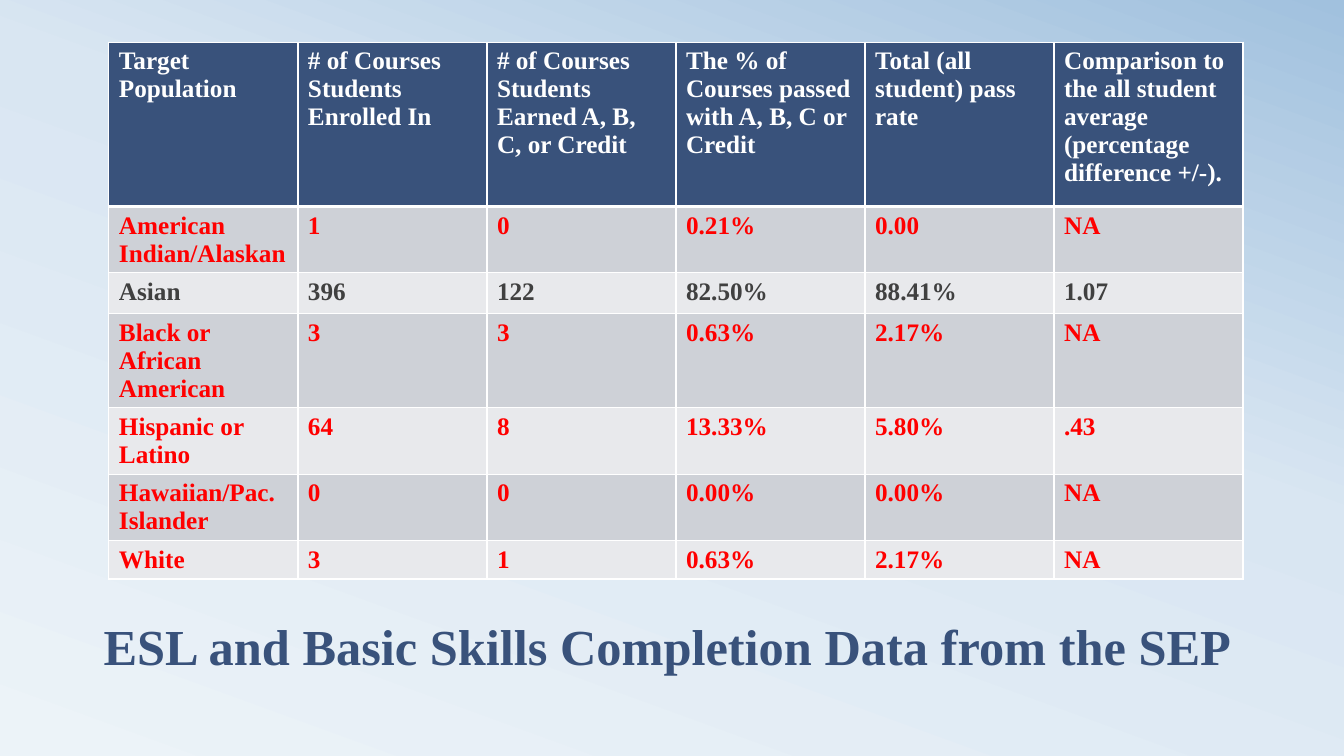
import copy

import pptx
import pptx.dml.color
import pptx.enum.text
import pptx.oxml
import pptx.oxml.ns
import pptx.util
from pptx.dml.color import RGBColor
from pptx.util import Inches

FONT = "Times New Roman"
NAVY = RGBColor(0x39, 0x52, 0x7B)
WHITE = RGBColor(0xFF, 0xFF, 0xFF)
RED = RGBColor(0xFF, 0x00, 0x00)
GRAY = RGBColor(0x40, 0x40, 0x40)
DARK_BAND = RGBColor(0xCE, 0xD1, 0xD7)
LIGHT_BAND = RGBColor(0xE8, 0xE9, 0xEC)
BACKGROUND_STOPS = [
    (0, RGBColor(0xEC, 0xF3, 0xF8)),
    (0.58, RGBColor(0xD9, 0xE6, 0xF2)),
    (1, RGBColor(0xA1, 0xC1, 0xDE)),
]

HEADER = [
    "Target Population",
    "# of Courses Students Enrolled In",
    "# of Courses Students Earned A, B, C, or Credit",
    "The % of Courses passed with A, B, C or Credit",
    "Total (all student) pass rate",
    "Comparison to the all student average (percentage difference +/-).",
]
POPULATIONS = [
    ["American Indian/Alaskan", "1", "0", "0.21%", "0.00", "NA"],
    ["Asian", "396", "122", "82.50%", "88.41%", "1.07"],
    ["Black or African American", "3", "3", "0.63%", "2.17%", "NA"],
    ["Hispanic or Latino", "64", "8", "13.33%", "5.80%", ".43"],
    ["Hawaiian/Pac.\nIslander", "0", "0", "0.00%", "0.00%", "NA"],
    ["White", "3", "1", "0.63%", "2.17%", "NA"],
]
ROW_HEIGHTS = [1.63, 0.65, 0.41, 0.93, 0.66, 0.66, 0.38]


def add_run(paragraph, text, size, color):
    run = paragraph.add_run()
    run.text = text
    run.font.name = FONT
    run.font.size = pptx.util.Pt(size)
    run.font.bold = True
    run.font.color.rgb = color


def set_borders(cell, widths):
    """Draw white borders; widths maps an edge tag to points."""
    properties = cell._tc.get_or_add_tcPr()
    for position, (edge, width) in enumerate(widths.items()):
        line = pptx.oxml.parse_xml(
            f'<a:{edge} {pptx.oxml.ns.nsdecls("a")} w="{pptx.util.Pt(width)}">'
            f'<a:solidFill><a:srgbClr val="{WHITE}"/></a:solidFill></a:{edge}>'
        )
        properties.insert(position, line)


def paint_background(slide):
    fill = slide.background.fill
    fill.gradient()
    fill.gradient_angle = 70
    # The default gradient has two stops; add a third
    stop_list = fill.gradient_stops[0]._gs.getparent()
    stop_list.append(copy.deepcopy(stop_list[-1]))
    for stop, (position, color) in zip(fill.gradient_stops, BACKGROUND_STOPS):
        stop.position = position
        stop.color.rgb = color


def place_title(slide, left, top, width, height):
    title = slide.shapes.title
    title.left, title.top, title.width, title.height = left, top, width, height
    frame = title.text_frame
    frame.word_wrap = True
    frame.auto_size = pptx.enum.text.MSO_AUTO_SIZE.NONE
    frame.vertical_anchor = pptx.enum.text.MSO_ANCHOR.BOTTOM
    paragraph = frame.paragraphs[0]
    paragraph.alignment = pptx.enum.text.PP_ALIGN.CENTER
    paragraph.line_spacing = 0.8
    add_run(paragraph, "ESL and Basic Skills Completion Data from the SEP ", 36, NAVY)


def fill_cell(cell, text, fill_color, text_color):
    cell.fill.solid()
    cell.fill.fore_color.rgb = fill_color
    frame = cell.text_frame
    for index, line in enumerate(text.split("\n")):
        paragraph = frame.add_paragraph() if index else frame.paragraphs[0]
        add_run(paragraph, line, 18, text_color)


def place_completion_table(slide, left, top, width, height):
    rows = [HEADER] + POPULATIONS
    table = slide.shapes.add_table(
        len(rows), len(HEADER), left, top, width, height
    ).table
    for column in table.columns:
        column.width = width // len(HEADER)
    for row, row_height in zip(table.rows, ROW_HEIGHTS):
        row.height = Inches(row_height)

    for row_index, values in enumerate(rows):
        if row_index == 0:
            fill_color, text_color = NAVY, WHITE
        else:
            fill_color = DARK_BAND if row_index % 2 else LIGHT_BAND
            text_color = GRAY if values[0] == "Asian" else RED
        # A thick rule separates the header from the body
        widths = {
            "lnL": 1,
            "lnR": 1,
            "lnT": 3 if row_index == 1 else 1,
            "lnB": 3 if row_index == 0 else 1,
        }
        for column_index, text in enumerate(values):
            cell = table.cell(row_index, column_index)
            fill_cell(cell, text, fill_color, text_color)
            set_borders(cell, widths)


def main():
    presentation = pptx.Presentation()
    presentation.slide_width = Inches(13.33)
    presentation.slide_height = Inches(7.5)
    slide = presentation.slides.add_slide(presentation.slide_layouts[5])
    paint_background(slide)
    place_title(slide, Inches(0.67), Inches(5.58), Inches(12), Inches(1.17))
    place_completion_table(
        slide, Inches(1.08), Inches(0.42), Inches(11.25), Inches(sum(ROW_HEIGHTS))
    )
    presentation.save("out.pptx")


if __name__ == "__main__":
    main()
